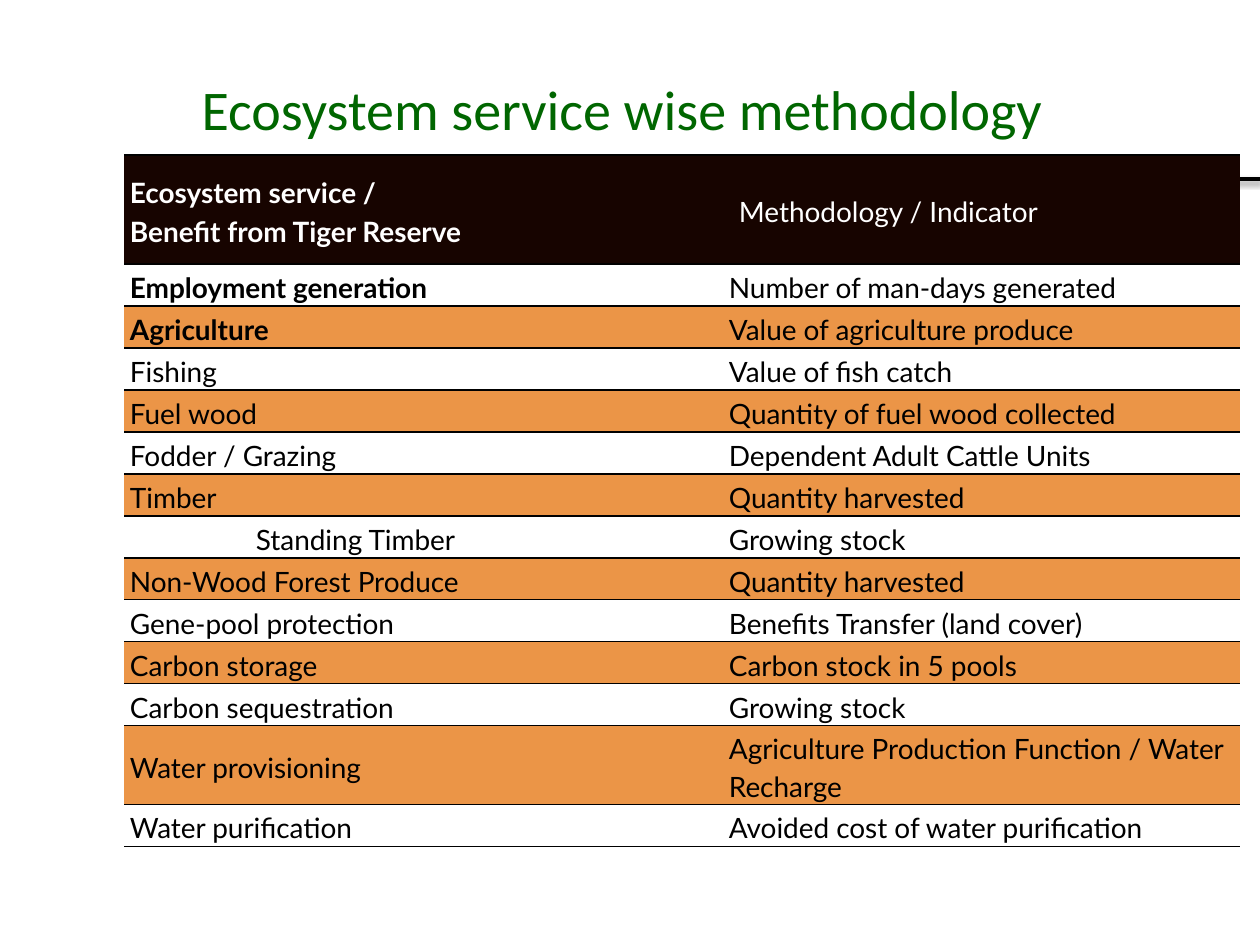
"""Build the slide that lists a methodology for each ecosystem service."""
from lxml.etree import SubElement
from pptx import Presentation
from pptx.dml.color import RGBColor as RGB
from pptx.enum.shapes import MSO_CONNECTOR as CONN
from pptx.enum.text import MSO_ANCHOR as ANCHOR, PP_ALIGN as ALIGN
from pptx.oxml import parse_xml
from pptx.oxml.ns import nsdecls, qn
from pptx.util import Emu, Pt

TITLE = "Ecosystem service wise methodology"
HEADER = ("Ecosystem service /\nBenefit from Tiger Reserve", "Methodology / Indicator")
ROWS = [
    ("Employment generation", "Number of man-days generated"),
    ("Agriculture", "Value of agriculture produce"),
    ("Fishing", "Value of fish catch"),
    ("Fuel wood", "Quantity of fuel wood collected"),
    ("Fodder / Grazing", "Dependent Adult Cattle Units"),
    ("Timber", "Quantity harvested"),
    ("\tStanding Timber", "Growing stock"),
    ("Non-Wood Forest Produce", "Quantity harvested"),
    ("Gene-pool protection", "Benefits Transfer (land cover)"),
    ("Carbon storage", "Carbon stock in 5 pools"),
    ("Carbon sequestration", "Growing stock"),
    ("Water provisioning", "Agriculture Production Function / Water Recharge"),
    ("Water purification", "Avoided cost of water purification"),
]
BOLD_SERVICES = {HEADER[0], "Employment generation", "Agriculture"}
TALL_SERVICE = "Water provisioning"

THEME = {
    "title": "006600", "header": "170400", "bands": ("FFFFFF", "EB9547"),
    "text": "000000", "header_text": "FFFFFF", "rule": "000000",
    "title_font": "Calibri", "body_font": "Lato",
    "title_size": 32, "body_size": 16, "spacing": 1.15,
}
SLIDE = (1260, 945)
TITLE_BOX = (189, 38, 1029, 141)
RULE = (158, 179, 1260, 179)
TABLE_AT = (124, 155)
COLUMNS = (599, 517)
HEADER_H, ROW_H, TALL_H = 109, 42, 79
INSET_X, INSET_Y, HEADER_INDENT, TAB = 6, 1, 10, 126


def px(n):
    return Emu(round(n * 914400 / 126))


def add_run(p, text, font, size, color, bold=False):
    r = p.add_run()
    r.text = text
    r.font.name, r.font.size, r.font.bold = font, Pt(size), bold
    r.font.color.rgb = RGB.from_string(color)


def add_rule(s):
    line = s.shapes.add_connector(CONN.STRAIGHT, *map(px, RULE))
    line.line.width = Pt(2)
    line.line.color.rgb = RGB.from_string(THEME["rule"])
    line._element.spPr.append(parse_xml(
        f'<a:effectLst {nsdecls("a")}>'
        '<a:outerShdw blurRad="40000" dist="20000" dir="5400000" rotWithShape="0">'
        f'<a:srgbClr val="{THEME["rule"]}"><a:alpha val="38000"/></a:srgbClr>'
        '</a:outerShdw></a:effectLst>'))


def set_borders(cell):
    tc_pr = cell._tc.get_or_add_tcPr()
    for i, side in enumerate(("lnL", "lnR", "lnT", "lnB")):
        ln = SubElement(tc_pr, qn(f"a:{side}"))
        if side in ("lnT", "lnB"):
            ln.set("w", str(Pt(1)))
            fill = SubElement(ln, qn("a:solidFill"))
            SubElement(fill, qn("a:srgbClr")).set("val", THEME["rule"])
        else:
            SubElement(ln, qn("a:noFill"))
        tc_pr.insert(i, ln)


def add_tab_stop(p):
    tabs = SubElement(p._p.get_or_add_pPr(), qn("a:tabLst"))
    tab = SubElement(tabs, qn("a:tab"))
    tab.set("pos", str(px(TAB)))
    tab.set("algn", "l")


def fill_cell(cell, text, row, col):
    header = row == 0
    cell.fill.solid()
    cell.fill.fore_color.rgb = RGB.from_string(
        THEME["header"] if header else THEME["bands"][(row - 1) % 2])
    set_borders(cell)
    cell.vertical_anchor = ANCHOR.MIDDLE
    cell.margin_left = cell.margin_right = px(INSET_X)
    cell.margin_top = cell.margin_bottom = px(INSET_Y)
    tf = cell.text_frame
    for i, part in enumerate(text.split("\n")):
        p = tf.add_paragraph() if i else tf.paragraphs[0]
        p.line_spacing = THEME["spacing"]
        p.alignment = ALIGN.LEFT if header or col else ALIGN.JUSTIFY
        if header and col:
            p._p.get_or_add_pPr().set("marL", str(px(HEADER_INDENT)))
        if "\t" in part:
            add_tab_stop(p)
        add_run(p, part, THEME["body_font"], THEME["body_size"],
                THEME["header_text" if header else "text"], text in BOLD_SERVICES)


def add_table(s):
    rows = [HEADER, *ROWS]
    heights = [HEADER_H] + [TALL_H if r[0] == TALL_SERVICE else ROW_H for r in ROWS]
    table = s.shapes.add_table(len(rows), len(COLUMNS), *map(
        px, (*TABLE_AT, sum(COLUMNS), sum(heights)))).table
    for column, width in zip(table.columns, COLUMNS):
        column.width = px(width)
    for i, (texts, height) in enumerate(zip(rows, heights)):
        table.rows[i].height = px(height)
        for j, text in enumerate(texts):
            fill_cell(table.cell(i, j), text, i, j)


def main():
    prs = Presentation()
    prs.slide_width, prs.slide_height = map(px, SLIDE)
    s = prs.slides.add_slide(prs.slide_layouts[5])
    title = s.shapes.title
    title.left, title.top, title.width, title.height = map(px, TITLE_BOX)
    tf = title.text_frame
    tf.vertical_anchor = ANCHOR.MIDDLE
    p = tf.paragraphs[0]
    p.alignment = ALIGN.LEFT
    add_run(p, TITLE, THEME["title_font"], THEME["title_size"], THEME["title"])
    add_rule(s)
    add_table(s)
    prs.save("out.pptx")


if __name__ == "__main__":
    main()
